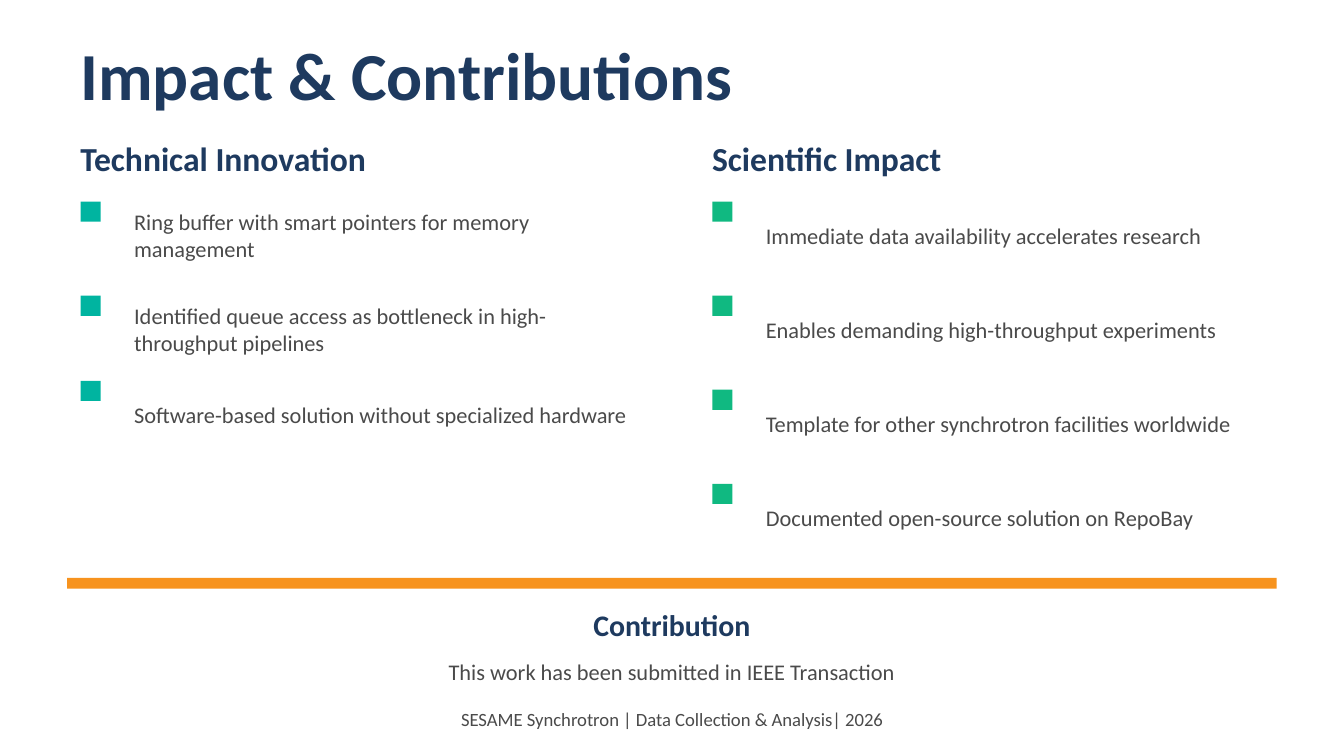
import pptx
import pptx.util
import pptx.dml.color
import pptx.enum.shapes
import pptx.enum.text

NAVY, GREY, TEAL, GREEN, ORANGE = "1E3A5F", "4A4A4A", "00B4A0", "10B981", "F7931E"
LEFT = pptx.enum.text.PP_ALIGN.LEFT
CENTER = pptx.enum.text.PP_ALIGN.CENTER

# Widescreen 16:9 page
deck = pptx.Presentation()
deck.slide_width = pptx.util.Inches(10)
deck.slide_height = deck.slide_width * 9 // 16
page = deck.slides.add_slide(deck.slide_layouts[6])

# Square grid: 100 cells across the slide
CELL = deck.slide_width // 100
MARGIN, FULL = 5, 90


def add_text(text, grid, size, color, bold=False, align=LEFT):
    box = page.shapes.add_textbox(*[round(n * CELL) for n in grid])
    frame = box.text_frame
    frame.word_wrap = True
    frame.vertical_anchor = pptx.enum.text.MSO_ANCHOR.MIDDLE
    para = frame.paragraphs[0]
    para.text = text
    para.alignment = align
    para.font.name = "Calibri"
    para.font.size = pptx.util.Pt(size)
    para.font.bold = bold
    para.font.color.rgb = pptx.dml.color.RGBColor.from_string(color)


def add_block(grid, color):
    block = page.shapes.add_shape(pptx.enum.shapes.MSO_SHAPE.RECTANGLE,
                                  *[round(n * CELL) for n in grid])
    block.shadow.inherit = False
    block.fill.solid()
    block.fill.fore_color.rgb = pptx.dml.color.RGBColor.from_string(color)
    block.line.fill.background()


# Title
add_text("Impact & Contributions", (MARGIN, 3, FULL, 5), 36, NAVY, bold=True)

# Two columns: heading, left, widths, marker colour, (row, item) pairs
columns = [
    ("Technical Innovation", MARGIN, 45, 39, TEAL, [
        (14.5, "Ring buffer with smart pointers for memory management"),
        (21.5, "Identified queue access as bottleneck in high-throughput pipelines"),
        (27.83, "Software-based solution without specialized hardware"),
    ]),
    ("Scientific Impact", 52, 43, 37, GREEN, [
        (14.5, "Immediate data availability accelerates research"),
        (21.5, "Enables demanding high-throughput experiments"),
        (28.5, "Template for other synchrotron facilities worldwide"),
        (35.5, "Documented open-source solution on RepoBay"),
    ]),
]
for heading, left, heading_width, item_width, color, items in columns:
    add_text(heading, (left, 10, heading_width, 3.5), 18, NAVY, bold=True)
    for top, item in items:
        add_block((left + 1, top + 0.5, 1.5, 1.5), color)
        add_text(item, (left + 4, top, item_width, 6), 12, GREY)

# Divider
add_block((MARGIN, 43, FULL, 0.8), ORANGE)

# Closing lines, evenly stepped
closing = [
    ("Contribution", 16, NAVY, True),
    ("This work has been submitted in IEEE Transaction", 12, GREY, False),
    ("SESAME Synchrotron | Data Collection & Analysis| 2026", 10, GREY, False),
]
for i, (line, size, color, bold) in enumerate(closing):
    add_text(line, (MARGIN, 45 + 3.5 * i, FULL, 3), size, color, bold, CENTER)

deck.save("out.pptx")
